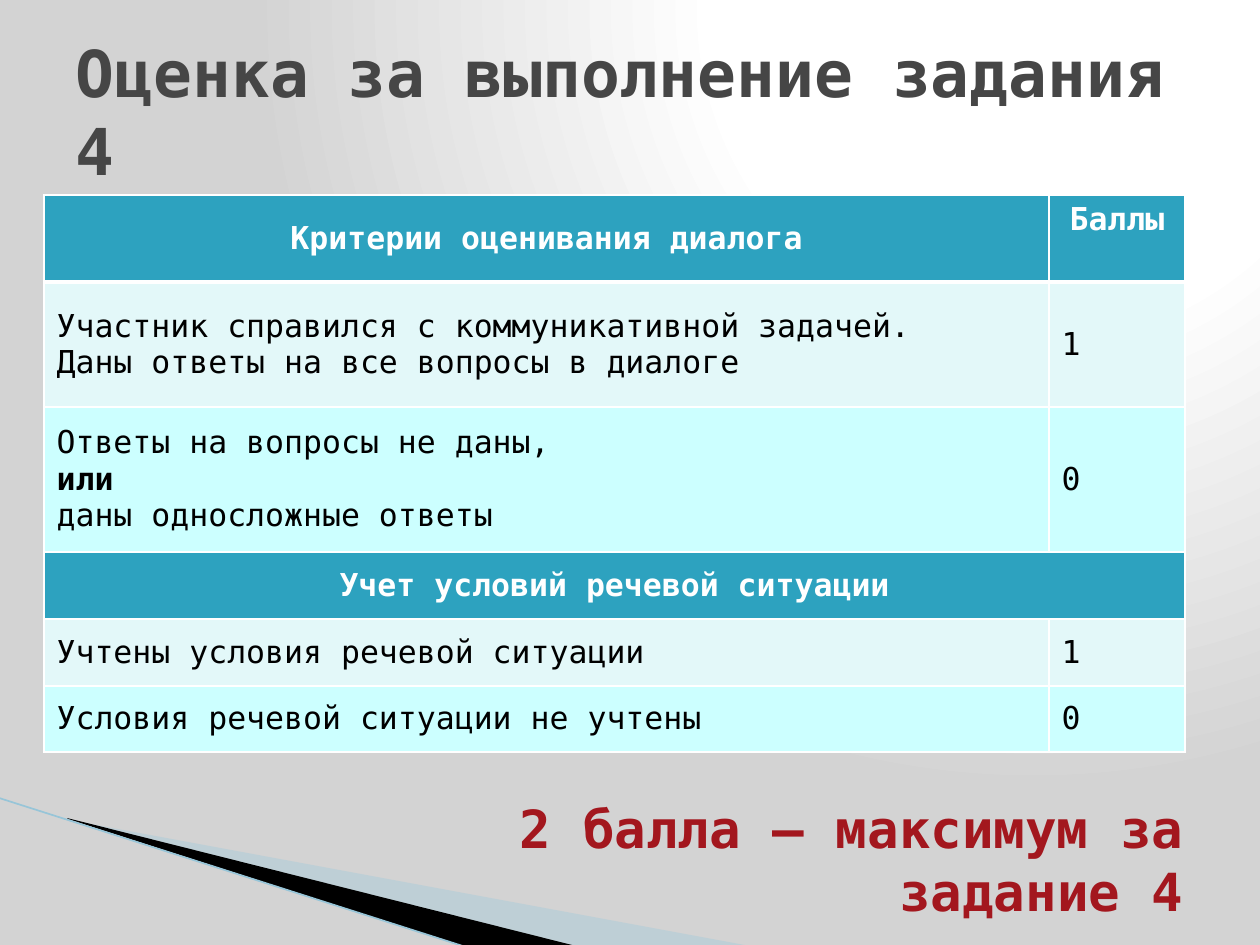
from dataclasses import dataclass

from lxml import etree
from pptx import Presentation
from pptx import util as u
from pptx.dml.color import RGBColor
from pptx.enum import text
from pptx.oxml import parse_xml
from pptx.oxml.ns import nsdecls, qn

EMU_PER_PX = 914400 / 126
FONT = "DejaVu Sans Mono"
WHITE, BLACK = "FFFFFF", "000000"
TEAL, PALE, CYAN = "2DA2BF", "E3F8F9", "CCFFFF"
LEFT, CENTER, RIGHT = text.PP_ALIGN.LEFT, text.PP_ALIGN.CENTER, text.PP_ALIGN.RIGHT
MIDDLE, TOP = text.MSO_ANCHOR.MIDDLE, text.MSO_ANCHOR.TOP


@dataclass
class Wedge:
    points: list[tuple[int, int]]
    color: str
    alpha: int = 100


@dataclass
class Row:
    height: int
    cells: list[str]
    fill: str
    header: bool = False


WEDGES = [
    Wedge([(69, 820), (750, 946), (575, 946), (69, 819)], "A0CBDC", 40),
    Wedge([(67, 818), (576, 946), (469, 948), (68, 819)], BLACK),
]
COLUMN_WIDTHS = [1005, 136]
ROWS = [
    Row(87, ["Критерии оценивания диалога", "Баллы"], TEAL, True),
    Row(125, ["Участник справился с коммуникативной задачей.\n"
              "Даны ответы на все вопросы в диалоге", "1"], PALE),
    Row(145, ["Ответы на вопросы не даны,\nили\nданы односложные ответы", "0"], CYAN),
    Row(67, ["Учет условий речевой ситуации"], TEAL, True),
    Row(67, ["Учтены условия речевой ситуации", "1"], PALE),
    Row(66, ["Условия речевой ситуации не учтены", "0"], CYAN),
]


def px(value: int) -> u.Emu:
    return u.Emu(round(value * EMU_PER_PX))


def rgb(value: str) -> RGBColor:
    return RGBColor.from_string(value)


def write(frame, content: str, size: float, color: str, bold: bool, align) -> None:
    """Fill a text frame, one paragraph for each line of the content."""
    frame.text = content
    for paragraph in frame.paragraphs:
        paragraph.alignment = align
        for run in paragraph.runs:
            values = {"name": FONT, "size": u.Pt(size), "bold": bold}
            for name, value in values.items():
                setattr(run.font, name, value)
            run.font.color.rgb = rgb(color)


def paint_background(slide) -> None:
    slide.background.fill.solid()
    solid = next(slide.background._cSld.iter(qn("a:solidFill")))
    stops = "".join(
        f'<a:gs pos="{position}000"><a:srgbClr val="{color}"/></a:gs>'
        for position, color in [(0, WHITE), (40, WHITE), (100, "D3D3D3")]
    )
    gradient = parse_xml(
        f'<a:gradFill {nsdecls("a")} rotWithShape="1"><a:gsLst>{stops}</a:gsLst>'
        '<a:path path="circle"><a:fillToRect l="65000" b="98000"/></a:path></a:gradFill>'
    )
    solid.getparent().replace(solid, gradient)


def draw_wedge(slide, wedge: Wedge) -> None:
    start, *others = [(px(x), px(y)) for x, y in wedge.points]
    builder = slide.shapes.build_freeform(*start)
    builder.add_line_segments(others, close=True)
    shape = builder.convert_to_shape()
    shape.shadow.inherit = False
    shape.line.fill.background()
    shape.fill.solid()
    shape.fill.fore_color.rgb = rgb(wedge.color)
    if wedge.alpha < 100:
        color = next(shape._element.spPr.iter(qn("a:srgbClr")))
        etree.SubElement(color, qn("a:alpha"), val=str(wedge.alpha * 1000))


def draw_edge_line(slide) -> None:
    line = slide.shapes.add_connector(1, px(-1), px(798), px(469), px(948))
    line.line.color.rgb = rgb("97C5D8")
    line.line.width = u.Pt(0.95)
    etree.SubElement(line._element.spPr, qn("a:effectLst"))


def set_borders(cell, row_index: int) -> None:
    """Thin white lines, with a thick one below the first row."""
    widths = {"L": 1, "R": 1, "T": 3 if row_index == 1 else 1, "B": 3 if row_index == 0 else 1}
    for index, (side, width) in enumerate(widths.items()):
        border = parse_xml(
            f'<a:ln{side} {nsdecls("a")} w="{u.Pt(width)}"><a:solidFill>'
            f'<a:srgbClr val="{WHITE}"/></a:solidFill></a:ln{side}>'
        )
        cell._tc.get_or_add_tcPr().insert(index, border)


def draw_table(slide):
    heights = [row.height for row in ROWS]
    table = slide.shapes.add_table(
        len(ROWS), len(COLUMN_WIDTHS), px(44), px(195), px(sum(COLUMN_WIDTHS)), px(sum(heights))
    ).table
    for column, width in zip(table.columns, COLUMN_WIDTHS):
        column.width = px(width)
    for row_index, row in enumerate(ROWS):
        table.rows[row_index].height = px(row.height)
        for column_index in range(len(COLUMN_WIDTHS)):
            cell = table.cell(row_index, column_index)
            cell.fill.solid()
            cell.fill.fore_color.rgb = rgb(row.fill)
            cell.vertical_anchor = MIDDLE
            set_borders(cell, row_index)
        for column_index, content in enumerate(row.cells):
            write(table.cell(row_index, column_index).text_frame, content, 18,
                  WHITE if row.header else BLACK, row.header, CENTER if row.header else LEFT)
        if len(row.cells) == 1:
            table.cell(row_index, 0).merge(table.cell(row_index, len(COLUMN_WIDTHS) - 1))
    return table


def place_title(slide) -> None:
    title = slide.shapes.title
    bounds = {"left": 63, "top": 26, "width": 1134, "height": 169}
    for name, value in bounds.items():
        setattr(title, name, px(value))
    write(title.text_frame, "Оценка за выполнение задания 4", 36.9, "464646", True, LEFT)
    title.text_frame.auto_size = text.MSO_AUTO_SIZE.NONE
    title.text_frame.vertical_anchor = MIDDLE
    title._element.getparent().append(title._element)


def add_total(slide) -> None:
    frame = slide.shapes.add_textbox(px(292), px(790), px(904), px(77)).text_frame
    frame.word_wrap = True
    frame.auto_size = text.MSO_AUTO_SIZE.SHAPE_TO_FIT_TEXT
    write(frame, "2 балла – максимум за задание 4", 30, "A3171E", True, RIGHT)


def main() -> None:
    presentation = Presentation()
    presentation.slide_width, presentation.slide_height = px(1260), px(945)
    slide = presentation.slides.add_slide(presentation.slide_layouts[5])
    paint_background(slide)
    for wedge in WEDGES:
        draw_wedge(slide, wedge)
    draw_edge_line(slide)
    place_title(slide)
    table = draw_table(slide)
    table.cell(0, 1).vertical_anchor = TOP
    table.cell(2, 0).text_frame.paragraphs[1].runs[0].font.bold = True
    add_total(slide)
    presentation.save("out.pptx")


if __name__ == "__main__":
    main()
